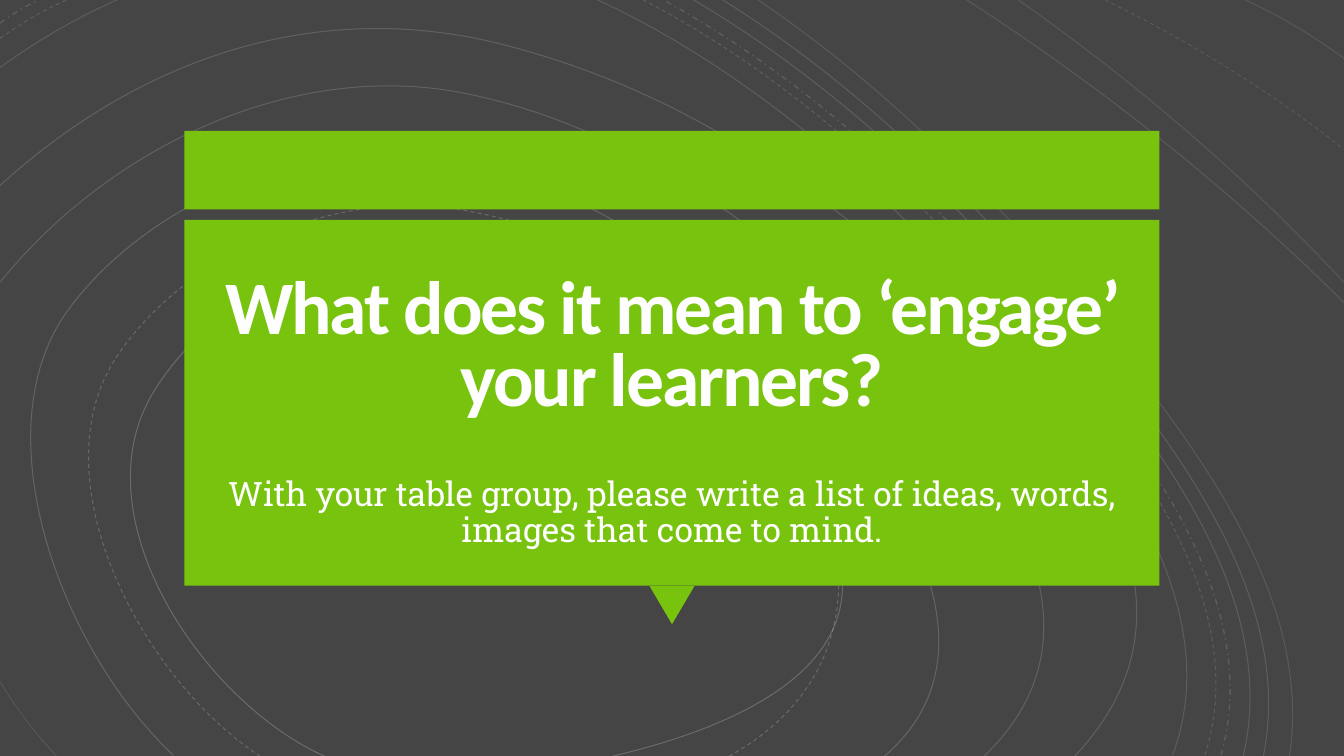
from collections import namedtuple
from dataclasses import dataclass
from math import dist

from lxml import etree
from pptx import Presentation
from pptx.dml.color import RGBColor
from pptx.enum.dml import MSO_LINE
from pptx.enum.shapes import MSO_SHAPE
from pptx.enum.text import MSO_ANCHOR, MSO_AUTO_SIZE, PP_ALIGN
from pptx.oxml.ns import qn
from pptx.util import Cm, Pt

RECTANGLE, TRIANGLE = MSO_SHAPE.RECTANGLE, MSO_SHAPE.ISOSCELES_TRIANGLE
SOLID, DASH, DASH_DOT = MSO_LINE.SOLID, MSO_LINE.DASH, MSO_LINE.DASH_DOT
TOP, BOTTOM = MSO_ANCHOR.TOP, MSO_ANCHOR.BOTTOM
NO_AUTOFIT = MSO_AUTO_SIZE.NONE
CENTER = PP_ALIGN.CENTER
TITLE_ONLY = 5

Box = namedtuple("Box", "left top width height")
Contour = namedtuple("Contour", "points opacity dash width", defaults=(SOLID, 0.75))


@dataclass(frozen=True)
class Theme:
    background: RGBColor = RGBColor(0x45, 0x45, 0x45)
    accent: RGBColor = RGBColor(0x78, 0xC3, 0x0D)
    contour: RGBColor = RGBColor(0xFF, 0xFF, 0xFF)
    text: RGBColor = RGBColor(0xFF, 0xFE, 0xFF)
    title_font: str = "Calibri"
    body_font: str = "Roboto Slab"
    title_size: int = 54
    body_size: int = 24


THEME = Theme()
CONTOUR_GRID = 1333
BOW = 0.035

MIDDLE_RING = [(876, 751), (1025, 625), (835, 409), (738, 315), (536, 164), (412, 153),
               (141, 208), (68, 307), (60, 644), (172, 749)]
INNER_RING = [(607, 750), (710, 726), (880, 667), (825, 529), (615, 278), (480, 248),
              (216, 281), (151, 391), (200, 695), (322, 750)]
WIDE_RING = [(975, 751), (1130, 604), (950, 413), (838, 306), (603, 120), (458, 92), (111, 143), (0, 280)]
OUTER_RING = [(1065, 751), (1213, 595), (1067, 422), (944, 307), (667, 87), (498, 44), (152, 46), (0, 184)]
FIRST_ARC = [(1163, 749), (1226, 581), (1064, 401), (963, 287), (736, 66), (593, 0)]
LAST_ARC = [(1279, 750), (1303, 590), (1182, 438), (1090, 322), (881, 87), (752, 0)]


def blend(first, last, share):
    return [tuple(a + (b - a) * share for a, b in zip(*pair)) for pair in zip(first, last)]


def smooth(knots):
    points = list(knots[:4])
    for control, anchor in zip(knots[4::2], knots[5::2]):
        before, handle, joint = points[-4], points[-2], points[-1]
        ratio = dist(joint, anchor) / dist(before, joint)
        points.append(tuple(j + (j - h) * ratio for j, h in zip(joint, handle)))
        points += [control, anchor]
    return points


def bow(start, end):
    dx, dy = end[0] - start[0], end[1] - start[1]
    controls = [(start[0] + dx * part / 3 + dy * BOW, start[1] + dy * part / 3 - dx * BOW)
                for part in (1, 2)]
    return [start, *controls, end]


def contours():
    yield Contour(smooth(MIDDLE_RING), 17)
    yield Contour(smooth(INNER_RING), 20)
    yield Contour(smooth(blend(MIDDLE_RING, INNER_RING, 0.57)), 18, DASH)
    yield Contour(smooth(WIDE_RING), 15)
    yield Contour(smooth(OUTER_RING), 14)
    for share, *style in ((0, 13), (0.28, 12, DASH), (0.41, 12, DASH_DOT, 1),
                          (0.6, 12), (0.78, 12), (1, 11)):
        yield Contour(smooth(blend(FIRST_ARC, LAST_ARC, share)), *style)
    yield Contour(bow((56, 750), (0, 676)), 15, SOLID, 0.38)
    for height, width, *style in ((67, 116, 13), (38, 66, 12, DASH), (23, 39, 12, DASH_DOT, 1)):
        yield Contour(bow((0, height), (width, 0)), *style)
    for left, bottom, *style in ((959, 300, 11), (1010, 280, 10), (1096, 148, 10, DASH), (1235, 58, 10)):
        yield Contour(bow((left, 0), (CONTOUR_GRID, bottom)), *style)


def bend_segments(shape):
    outline = next(shape._element.iter(qn("a:path")))
    segments = outline.findall(qn("a:lnTo"))
    for first in range(0, len(segments), 3):
        curve = etree.SubElement(outline, qn("a:cubicBezTo"))
        for segment in segments[first:first + 3]:
            curve.append(segment[0])
            outline.remove(segment)


def add_contours(slide, box):
    group = slide.shapes.add_group_shape()
    for contour in contours():
        points = [(round(x), round(y)) for x, y in contour.points]
        builder = group.shapes.build_freeform(*points[0], scale=box.width / CONTOUR_GRID)
        builder.add_line_segments(points[1:], close=False)
        shape = builder.convert_to_shape(box.left, box.top)
        bend_segments(shape)
        shape.shadow.inherit = False
        shape.fill.background()
        shape.line.width = Pt(contour.width)
        shape.line.dash_style = contour.dash
        shape.line.color.rgb = THEME.contour
        color = next(shape.line._ln.iter(qn("a:srgbClr")))
        etree.SubElement(color, qn("a:alpha"), val=str(contour.opacity * 1000))


def place(shape, box):
    shape.left, shape.top, shape.width, shape.height = box


def write_text(shape, text, *, font, size, bold=False, anchor=TOP, insets=(0, 0, 0, 0),
               line_spacing=1.0, tracking=0):
    frame = shape.text_frame
    frame.word_wrap = True
    frame.auto_size = NO_AUTOFIT
    frame.vertical_anchor = anchor
    frame.margin_left, frame.margin_top, frame.margin_right, frame.margin_bottom = insets
    paragraph = frame.paragraphs[0]
    paragraph.alignment = CENTER
    paragraph.line_spacing = line_spacing
    paragraph.space_before = Pt(0)
    run = paragraph.add_run()
    run.text = text
    run.font.name = font
    run.font.size = Pt(size)
    run.font.bold = bold
    run.font.color.rgb = THEME.text
    if tracking:
        run._r.get_or_add_rPr().set("spc", str(round(tracking * 100)))


def add_block(slide, kind, box, rotation=0):
    shape = slide.shapes.add_shape(kind, *box)
    shape.rotation = rotation
    shape.shadow.inherit = False
    shape.fill.solid()
    shape.fill.fore_color.rgb = THEME.accent
    shape.line.fill.background()


def add_callout(slide, box):
    band_height, gap = Cm(1.98), Cm(0.26)
    pointer_width, pointer_height = Cm(1.14), Cm(0.97)
    panel_top = box.top + band_height + gap
    panel_bottom = box.top + box.height - pointer_height
    add_block(slide, RECTANGLE, Box(box.left, box.top, box.width, band_height))
    pointer_left = box.left + (box.width - pointer_width) // 2
    add_block(slide, TRIANGLE, Box(pointer_left, panel_bottom, pointer_width, pointer_height), 180)
    add_block(slide, RECTANGLE, Box(box.left, panel_top, box.width, panel_bottom - panel_top))

    padding, title_height, body_height = Cm(0.23), Cm(4.85), Cm(3.68)
    text_left, text_width = box.left + padding, box.width - 2 * padding
    title = slide.shapes.title
    place(title, Box(text_left, panel_top + padding, text_width, title_height))
    slide.shapes._spTree.append(title._element)
    write_text(title, "What does it mean to ‘engage’ your learners?",
               font=THEME.title_font, size=THEME.title_size, bold=True, anchor=BOTTOM,
               insets=(Cm(0.64), Cm(0.64), Cm(0.64), 0), line_spacing=0.8, tracking=-1.5)
    body_top = panel_bottom - padding - body_height
    body = slide.shapes.add_textbox(text_left, body_top, text_width, body_height)
    write_text(body, "With your table group, please write a list of ideas, words, images that come to mind.",
               font=THEME.body_font, size=THEME.body_size,
               insets=(Cm(0.25), Cm(1.17), Cm(0.25), Cm(0.13)), line_spacing=0.9)


def build_question_slide(presentation, box):
    slide = presentation.slides.add_slide(presentation.slide_layouts[TITLE_ONLY])
    slide.background.fill.solid()
    slide.background.fill.fore_color.rgb = THEME.background
    add_contours(slide, box)
    width, height = Cm(24.57), Cm(12.43)
    add_callout(slide, Box(box.left + (box.width - width) // 2, box.top + Cm(3.3), width, height))


def main():
    presentation = Presentation()
    presentation.slide_width, presentation.slide_height = Cm(33.87), Cm(19.05)
    build_question_slide(presentation, Box(0, 0, presentation.slide_width, presentation.slide_height))
    presentation.save("out.pptx")


if __name__ == "__main__":
    main()
